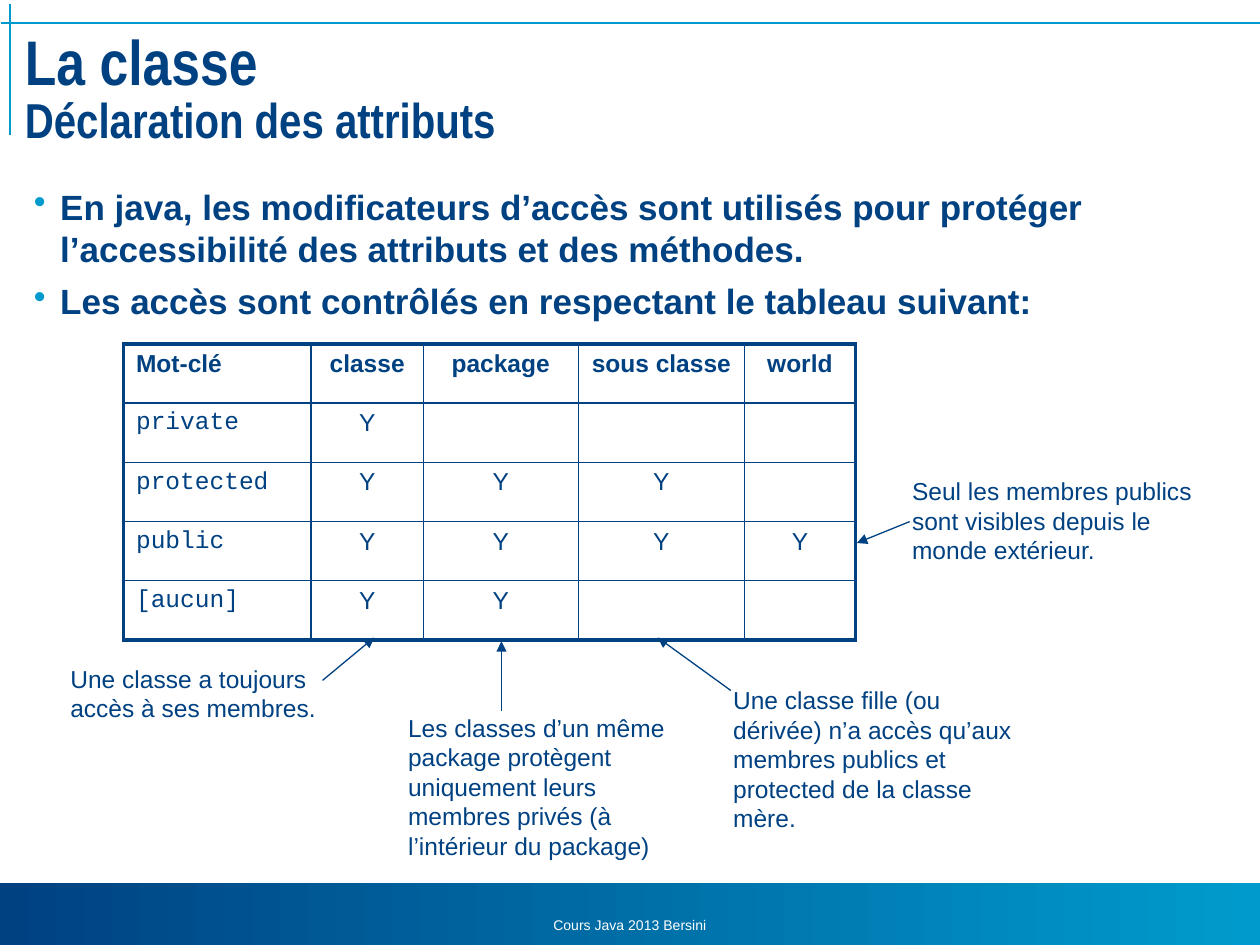
from dataclasses import dataclass

from lxml import etree
from pptx import Presentation
from pptx.dml.color import RGBColor
from pptx.enum.shapes import MSO_CONNECTOR, MSO_SHAPE
from pptx.enum.text import MSO_ANCHOR, PP_ALIGN
from pptx.oxml.ns import qn
from pptx.util import Inches, Pt

LEFT, CENTER = PP_ALIGN.LEFT, PP_ALIGN.CENTER
TOP, MIDDLE, BOTTOM = MSO_ANCHOR.TOP, MSO_ANCHOR.MIDDLE, MSO_ANCHOR.BOTTOM
STRAIGHT, RECT = MSO_CONNECTOR.STRAIGHT, MSO_SHAPE.RECTANGLE


@dataclass(frozen=True)
class Theme:
    navy: str = "004182"
    cyan: str = "009BCC"
    white: str = "FFFFFF"
    sans: str = "Arial"
    narrow: str = "Arial Narrow"
    mono: str = "Courier New"
    title: int = 36
    subtitle: int = 28
    body: int = 20
    note: int = 14
    footer: int = 8
    thin: float = 0.75
    rule: float = 1
    frame: float = 2.25


T = Theme()

BULLETS = [
    "En java, les modificateurs d’accès sont utilisés pour protéger "
    "l’accessibilité des attributs et des méthodes.",
    "Les accès sont contrôlés en respectant le tableau suivant:",
]

HEADER = ["Mot-clé", "classe", "package", "sous classe", "world"]
# Keyword and the number of columns, from the left, that have access
ACCESS = [("private", 1), ("protected", 3), ("public", 4), ("[aucun]", 2)]
COL_WIDTHS = [1.49, 0.89, 1.23, 1.32, 0.88]
ROW_HEIGHT = 0.47

# Text, left, top, height, arrow start, arrow end
NOTES = [
    ("Une classe a toujours accès à ses membres.",
     0.46, 5.22, 0.57, (2.56, 5.4), (2.97, 5.06)),
    ("Seul les membres publics sont visibles depuis le monde extérieur.",
     7.14, 3.73, 0.8, (7.22, 4.14), (6.8, 4.31)),
    ("Les classes d’un même package protègent uniquement leurs membres "
     "privés (à l’intérieur du package)",
     3.14, 5.61, 1.26, (3.98, 5.64), (3.98, 5.09)),
    ("Une classe fille (ou dérivée) n’a accès qu’aux membres publics et "
     "protected de la classe mère.",
     5.72, 5.39, 1.26, (5.8, 5.48), (5.22, 5.06)),
]
NOTE_WIDTH = 2.49


def rgb(color):
    return RGBColor.from_string(color)


def add_text(p, text, size=T.note, font=T.sans, color=T.navy, bold=False,
             align=LEFT):
    p.alignment = align
    r = p.add_run()
    r.text = text
    r.font.size = Pt(size)
    r.font.name = font
    r.font.bold = bold
    r.font.color.rgb = rgb(color)


def add_box(s, left, top, width, height, anchor=TOP):
    sp = s.shapes.add_textbox(Inches(left), Inches(top), Inches(width),
                              Inches(height))
    tf = sp.text_frame
    tf.word_wrap = True
    tf.vertical_anchor = anchor
    return tf


def add_line(s, start, end, color=T.navy, width=T.thin, arrow=False):
    c = s.shapes.add_connector(STRAIGHT, *map(Inches, start + end))
    c.line.color.rgb = rgb(color)
    c.line.width = Pt(width)
    if arrow:
        etree.SubElement(c.line._get_or_add_ln(), qn("a:tailEnd"),
                         type="triangle")
    etree.SubElement(c._element.spPr, qn("a:effectLst"))


def add_bullet(p):
    pPr = p._p.get_or_add_pPr()
    pPr.set("marL", str(Inches(0.21)))
    pPr.set("indent", str(-Inches(0.21)))
    color = etree.SubElement(pPr, qn("a:buClr"))
    etree.SubElement(color, qn("a:srgbClr"), val=T.cyan)
    etree.SubElement(pPr, qn("a:buChar"), char="•")


def set_borders(cell, widths):
    tcPr = cell._tc.get_or_add_tcPr()
    for i, (side, width) in enumerate(widths.items()):
        ln = etree.Element(qn(f"a:ln{side}"), w=str(Pt(width)))
        fill = etree.SubElement(ln, qn("a:solidFill"))
        etree.SubElement(fill, qn("a:srgbClr"), val=T.navy)
        tcPr.insert(i, ln)


def add_decor(s):
    # Footer band and the two crossing rules
    sp = s.shapes.add_shape(RECT, 0, Inches(7.01), Inches(10), Inches(0.49))
    sp.shadow.inherit = False
    sp.line.fill.background()
    sp.fill.gradient()
    sp.fill.gradient_angle = 0
    for stop, color in zip(sp.fill.gradient_stops, (T.navy, T.cyan)):
        stop.color.rgb = rgb(color)
    add_line(s, (0.01, 0.18), (10, 0.18), T.cyan, T.rule)
    add_line(s, (0.08, 0.03), (0.08, 1.07), T.cyan, T.rule)
    tf = add_box(s, 3.33, 7.08, 3.34, 0.38, BOTTOM)
    add_text(tf.paragraphs[0], "Cours Java 2013 Bersini", size=T.footer,
             color=T.white, align=CENTER)


def add_title(s):
    tf = add_box(s, 0.1, 0.22, 9.83, 1.01, MIDDLE)
    tf.margin_top = tf.margin_bottom = Inches(0.04)
    p = tf.paragraphs[0]
    p.line_spacing = 0.85
    add_text(p, "La classe", size=T.title, font=T.narrow, bold=True)
    p.add_line_break()
    add_text(p, "Déclaration des attributs", size=T.subtitle, font=T.narrow,
             bold=True)


def add_body(s):
    tf = add_box(s, 0.17, 1.42, 9.67, 1.31)
    for i, text in enumerate(BULLETS):
        p = tf.add_paragraph() if i else tf.paragraphs[0]
        add_bullet(p)
        if i:
            p.space_before = Pt(0.3 * T.body)
        add_text(p, text, size=T.body, bold=True)


def add_access_table(s):
    rows = [HEADER] + [[word] + ["Y"] * n + [""] * (4 - n)
                       for word, n in ACCESS]
    last_row, last_col = len(rows) - 1, len(HEADER) - 1
    table = s.shapes.add_table(
        len(rows), len(HEADER), Inches(0.98), Inches(2.73),
        Inches(sum(COL_WIDTHS)), Inches(ROW_HEIGHT * len(rows))).table
    table.first_row = table.horz_banding = False
    for col, width in zip(table.columns, COL_WIDTHS):
        col.width = Inches(width)
    for i, row in enumerate(rows):
        table.rows[i].height = Inches(ROW_HEIGHT)
        for j, text in enumerate(row):
            cell = table.cell(i, j)
            cell.fill.background()
            outer = {"L": j == 0, "R": j == last_col,
                     "T": i == 0, "B": i == last_row}
            set_borders(cell, {side: T.frame if edge else T.rule
                               for side, edge in outer.items()})
            if text:
                add_text(cell.text_frame.paragraphs[0], text, bold=i == 0,
                         font=T.mono if i and j == 0 else T.sans,
                         align=CENTER if j else LEFT)


def add_notes(s):
    for text, left, top, height, start, end in NOTES:
        tf = add_box(s, left, top, NOTE_WIDTH, height)
        add_text(tf.paragraphs[0], text)
        add_line(s, start, end, arrow=True)


def main():
    prs = Presentation()
    prs.slide_width, prs.slide_height = Inches(10), Inches(7.5)
    s = prs.slides.add_slide(prs.slide_layouts[6])
    add_decor(s)
    add_title(s)
    add_body(s)
    add_access_table(s)
    add_notes(s)
    prs.save("out.pptx")


if __name__ == "__main__":
    main()
